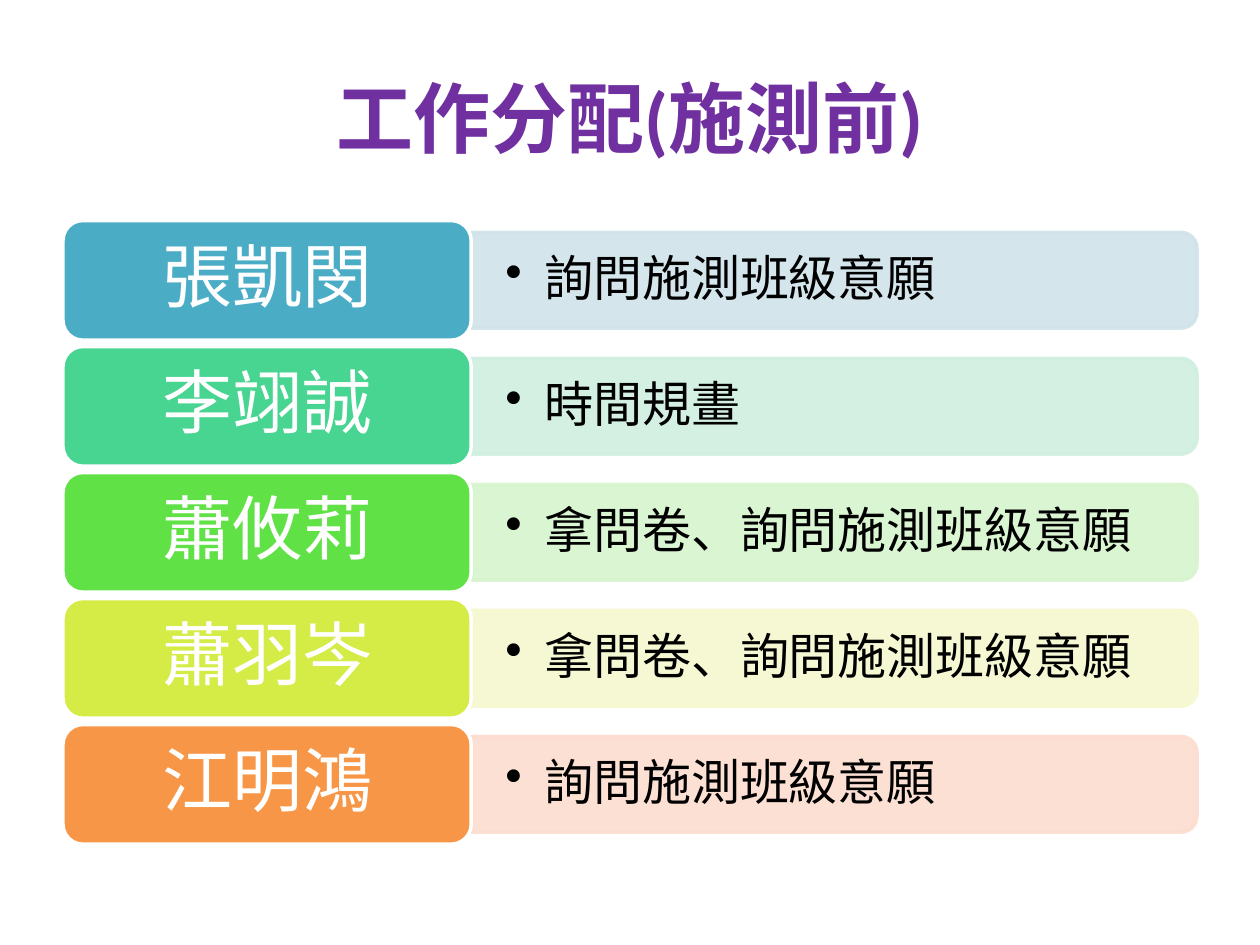
from lxml import etree
from pptx import Presentation
from pptx.dml.color import RGBColor
from pptx.enum.shapes import MSO_SHAPE
from pptx.enum.text import MSO_ANCHOR, PP_ALIGN
from pptx.oxml.ns import qn
from pptx.util import Inches, Pt

ROUNDED = MSO_SHAPE.ROUNDED_RECTANGLE
ROUNDED_END = MSO_SHAPE.ROUND_2_SAME_RECTANGLE
MIDDLE = MSO_ANCHOR.MIDDLE
CENTER = PP_ALIGN.CENTER

FONT = "Calibri"
PURPLE = RGBColor(0x70, 0x30, 0xA0)
WHITE = RGBColor(0xFF, 0xFF, 0xFF)
BLACK = RGBColor(0x00, 0x00, 0x00)
BLUE = RGBColor(0x4B, 0xAC, 0xC6)
PALE_BLUE = RGBColor(0xD0, 0xE3, 0xEA)
TEAL = RGBColor(0x48, 0xD4, 0x91)
PALE_TEAL = RGBColor(0xCF, 0xEF, 0xE1)
GREEN = RGBColor(0x60, 0xE1, 0x46)
PALE_GREEN = RGBColor(0xD6, 0xF4, 0xCE)
YELLOW = RGBColor(0xD5, 0xEC, 0x46)
PALE_YELLOW = RGBColor(0xF6, 0xF8, 0xCF)
ORANGE = RGBColor(0xF7, 0x96, 0x46)
PALE_ORANGE = RGBColor(0xFC, 0xDD, 0xCF)

ASSIGNMENTS = [
    ("張凱閔", "詢問施測班級意願", BLUE, PALE_BLUE),
    ("李翊誠", "時間規畫", TEAL, PALE_TEAL),
    ("蕭攸莉", "拿問卷、詢問施測班級意願", GREEN, PALE_GREEN),
    ("蕭羽岑", "拿問卷、詢問施測班級意願", YELLOW, PALE_YELLOW),
    ("江明鴻", "詢問施測班級意願", ORANGE, PALE_ORANGE),
]
FIRST_TOP = 1.75
ROW_PITCH = 1.0
NAME_HEIGHT = 0.95
BAR_LEFT, BAR_LENGTH, BAR_HEIGHT = 3.74, 5.76, 0.76


def paint(shape, fill_color, line_color):
    shape.shadow.inherit = False
    shape.fill.solid()
    shape.fill.fore_color.rgb = fill_color
    shape.line.color.rgb = line_color
    shape.line.width = Pt(2)


def write(shape, text, size, color, side_inset, end_inset):
    frame = shape.text_frame
    frame.word_wrap = True
    frame.vertical_anchor = MIDDLE
    frame.margin_left = frame.margin_right = Inches(side_inset)
    frame.margin_top = frame.margin_bottom = Inches(end_inset)
    para = frame.paragraphs[0]
    para.text = text
    para.line_spacing = 0.9
    para.font.name = FONT
    para.font.size = Pt(size)
    para.font.color.rgb = color
    return para


deck = Presentation()
deck.slide_width = Inches(10)
deck.slide_height = Inches(7.5)
page = deck.slides.add_slide(deck.slide_layouts[5])

title = page.shapes.title
title.left, title.top = Inches(0.5), Inches(0.3)
title.width, title.height = Inches(9), Inches(1.25)
title.text_frame.vertical_anchor = MIDDLE
heading = title.text_frame.paragraphs[0]
heading.text = "工作分配(施測前)"
heading.alignment = CENTER
heading.font.name = FONT
heading.font.size = Pt(44)
heading.font.bold = True
heading.font.color.rgb = PURPLE

for row, (name, task, strong, pale) in enumerate(ASSIGNMENTS):
    top = FIRST_TOP + row * ROW_PITCH
    middle = top + NAME_HEIGHT / 2

    bar = page.shapes.add_shape(
        ROUNDED_END,
        Inches(BAR_LEFT + (BAR_LENGTH - BAR_HEIGHT) / 2),
        Inches(middle - BAR_LENGTH / 2),
        Inches(BAR_HEIGHT),
        Inches(BAR_LENGTH),
    )
    bar.rotation = 90
    paint(bar, pale, pale)
    for color in bar.element.spPr.iter(qn("a:srgbClr")):
        etree.SubElement(color, qn("a:alpha"), val="90000")

    task_box = page.shapes.add_textbox(
        Inches(BAR_LEFT), Inches(top + 0.13), Inches(5.72), Inches(0.69)
    )
    para = task_box.text_frame.paragraphs[0]
    para.level = 1
    properties = para._p.get_or_add_pPr()
    properties.set("marL", str(Inches(0.31)))
    properties.set("indent", str(Inches(-0.31)))
    etree.SubElement(properties, qn("a:buChar"), char="•")
    write(task_box, task, 28, BLACK, 0.27, 0.14)

    name_box = page.shapes.add_shape(
        ROUNDED, Inches(0.5), Inches(top), Inches(3.24), Inches(NAME_HEIGHT)
    )
    paint(name_box, strong, WHITE)
    write(name_box, name, 40, WHITE, 0.17, 0.08).alignment = CENTER

deck.save("out.pptx")
